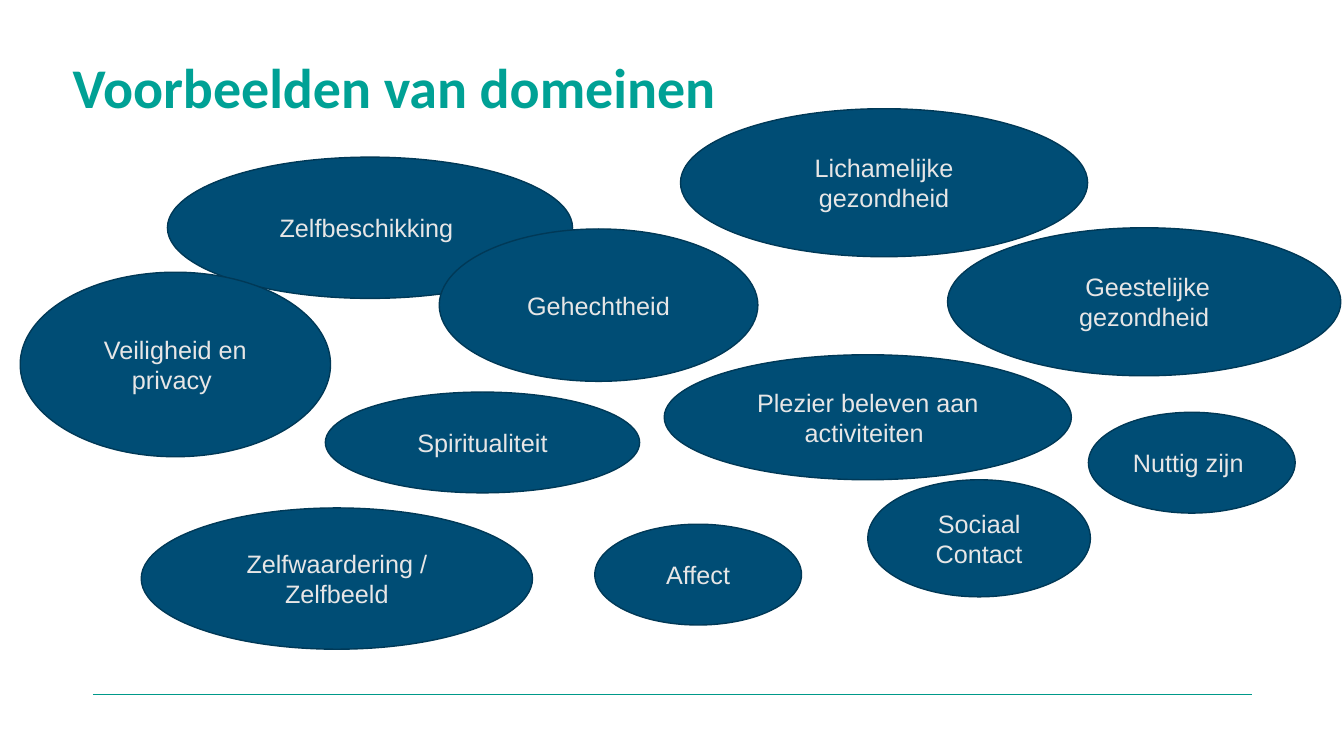
"""Build a slide of overlapping ovals that name example domains."""
from lxml import etree
from pptx import Presentation
from pptx import util as u
from pptx.dml.color import RGBColor
from pptx.enum import shapes, text
from pptx.oxml.ns import qn

TITLE = "Voorbeelden van domeinen"
OVALS = [
    ("Zelfbeschikking ", 4.22, 3.96, 10.21, 3.56),
    ("Veiligheid en privacy ", 0.51, 6.86, 7.82, 4.65),
    ("Nuttig zijn ", 27.43, 10.39, 5.21, 2.54),
    ("Spiritualiteit", 8.2, 9.88, 7.92, 2.54),
    (" Geestelijke gezondheid", 23.88, 5.74, 9.91, 3.73),
    ("Plezier beleven aan activiteiten ", 16.74, 8.94, 10.26, 3.15),
    ("Sociaal Contact", 21.87, 12.09, 5.61, 2.95),
    ("Gehechtheid", 11.07, 5.77, 8.03, 3.84),
    ("Zelfwaardering / Zelfbeeld", 3.56, 12.8, 9.86, 3.56),
    ("Affect", 14.99, 13.21, 5.21, 2.54),
    ("Lichamelijke gezondheid", 17.15, 2.74, 10.26, 3.73),
]


def paint(part, color):
    part.solid()
    part.fore_color.rgb = RGBColor.from_string(color)


def stroke(shape, color):
    paint(shape.line.fill, color)
    shape.line.width = u.Pt(1)


def write(shape, words, face, size, color, align, bold=False):
    frame = shape.text_frame
    frame.word_wrap = True
    frame.vertical_anchor = text.MSO_ANCHOR.MIDDLE
    para = frame.paragraphs[0]
    para.text = words
    para.alignment = align
    font = para.font
    font.name, font.size, font.bold = face, u.Pt(size), bold
    paint(font.fill, color)
    return frame


def main():
    deck = Presentation()
    deck.slide_width, deck.slide_height = u.Cm(33.87), u.Cm(19.05)
    slide = deck.slides.add_slide(deck.slide_layouts[6])
    parts = slide.shapes

    rule = parts.add_connector(
        shapes.MSO_CONNECTOR.STRAIGHT, *map(u.Cm, (2.34, 17.5, 31.55, 17.5)))
    stroke(rule, "00998A")
    etree.SubElement(rule._element.spPr, qn("a:effectLst"))

    title = parts.add_textbox(*map(u.Cm, (1.83, 1.42, 29.79, 1.52)))
    frame = write(title, TITLE, "Calibri", 40, "00A195", text.PP_ALIGN.LEFT, True)
    frame.margin_left = frame.margin_right = 0
    frame.margin_top = frame.margin_bottom = 0

    for words, *box in OVALS:
        oval = parts.add_shape(shapes.MSO_SHAPE.OVAL, *map(u.Cm, box))
        oval.shadow.inherit = False
        paint(oval.fill, "004D75")
        stroke(oval, "003957")
        write(oval, words, "Arial", 18, "E7E6E6", text.PP_ALIGN.CENTER)

    deck.save("out.pptx")


if __name__ == "__main__":
    main()
